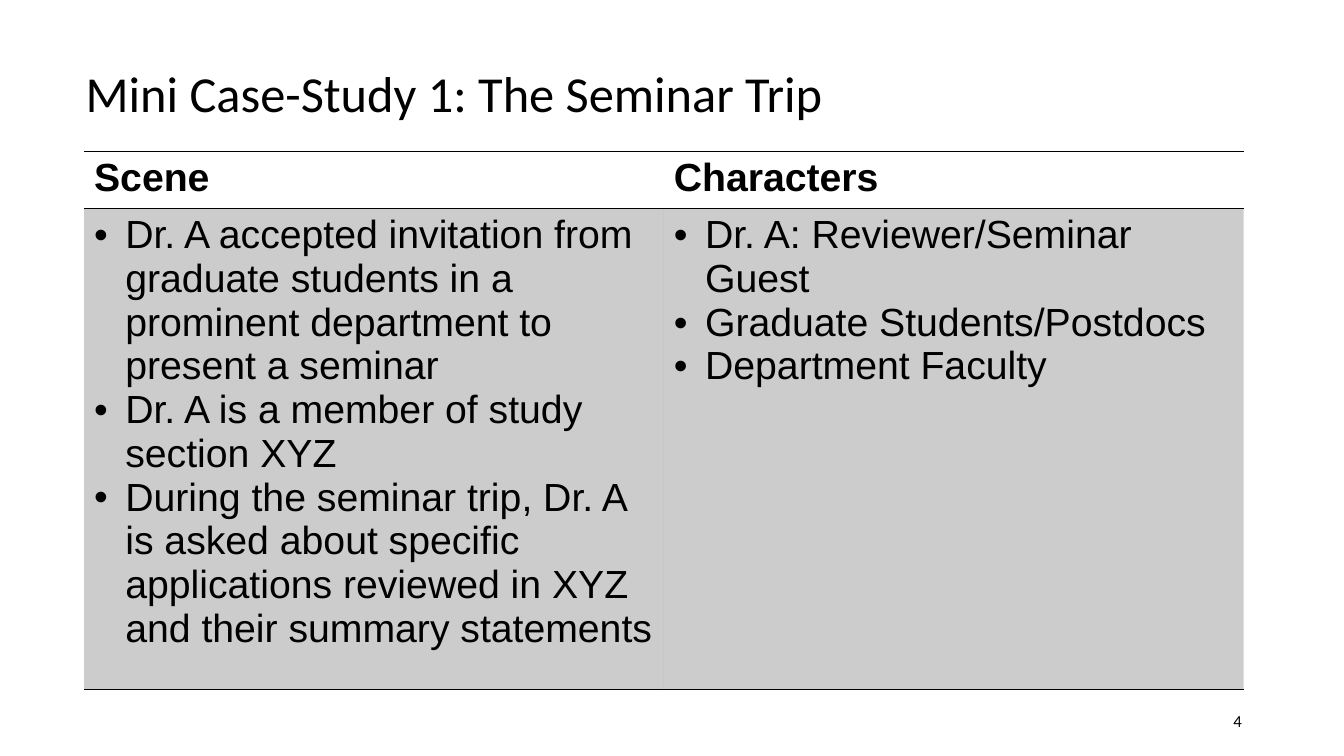
from lxml.etree import SubElement
from pptx import Presentation
from pptx.dml.color import RGBColor
from pptx.enum.text import MSO_ANCHOR as Anchor, PP_ALIGN as Align
from pptx.oxml import parse_xml
from pptx.oxml.ns import nsdecls, qn
from pptx.util import Inches, Pt

UNIT = 7.5 / 9
BLACK = "000000"
SCENE = [
    "Dr. A accepted invitation from graduate students in a prominent department to present a seminar",
    "Dr. A is a member of study section XYZ",
    "During the seminar trip, Dr. A is asked about specific applications reviewed in XYZ and their summary statements",
]
CHARACTERS = [
    "Dr. A: Reviewer/Seminar Guest",
    "Graduate Students/Postdocs",
    "Department Faculty",
]


def grid(units):
    return Inches(units * UNIT)


def color(value):
    return RGBColor.from_string(value)


def add_span(para, text, size, font, bold=False):
    span = para.add_run()
    span.text = text
    span.font.size = Pt(size)
    span.font.name = font
    span.font.bold = bold
    span.font.color.rgb = color(BLACK)


def add_label(page, area, text, size, align=Align.LEFT, spacing=1.0):
    box = page.shapes.add_textbox(*map(grid, area))
    frame = box.text_frame
    frame.word_wrap = True
    frame.vertical_anchor = Anchor.MIDDLE
    para = frame.paragraphs[0]
    para.alignment = align
    para.line_spacing = spacing
    add_span(para, text, size, "Calibri")


def add_bullet(para):
    props = para._p.get_or_add_pPr()
    indent = Inches(0.31)
    props.set("marL", str(indent))
    props.set("indent", str(-indent))
    SubElement(props, qn("a:buFont")).set("typeface", "Arial")
    SubElement(props, qn("a:buChar")).set("char", "•")


def set_borders(cell, ruled):
    props = cell._tc.get_or_add_tcPr()
    for index, side in enumerate("LRTB"):
        paint = "<a:noFill/>"
        if side in ruled:
            paint = f'<a:solidFill><a:srgbClr val="{BLACK}"/></a:solidFill>'
        props.insert(index, parse_xml(
            f'<a:ln{side} {nsdecls("a")} w="{Pt(1)}">{paint}</a:ln{side}>'))


def set_tint(cell, opacity):
    cell.fill.solid()
    cell.fill.fore_color.rgb = color(BLACK)
    tint = cell._tc.get_or_add_tcPr().find(".//" + qn("a:srgbClr"))
    SubElement(tint, qn("a:alpha")).set("val", str(opacity * 1000))


def fill_header(cell, text):
    add_span(cell.text_frame.paragraphs[0], text, 28, "Arial", True)
    cell.fill.background()
    set_borders(cell, "TB")


def fill_body(cell, items):
    frame = cell.text_frame
    for index, item in enumerate(items):
        para = frame.add_paragraph() if index else frame.paragraphs[0]
        add_bullet(para)
        add_span(para, item, 28, "Arial")
    set_tint(cell, 20)
    set_borders(cell, "TB")


def add_case_table(page, area, heights, columns):
    table = page.shapes.add_table(2, len(columns), *map(grid, area)).table
    table.first_row = False
    table.horz_banding = False
    for row, height in zip(table.rows, heights):
        row.height = grid(height)
    for index, (heading, items) in enumerate(columns.items()):
        fill_header(table.cell(0, index), heading)
        fill_body(table.cell(1, index), items)


def main():
    deck = Presentation()
    deck.slide_width = Inches(13.33)
    deck.slide_height = grid(9)
    page = deck.slides.add_slide(deck.slide_layouts[6])
    add_label(page, (0.9, 0.6, 14, 1.1),
              "Mini Case-Study 1: The Seminar Trip", 36, spacing=0.9)
    add_label(page, (11.3, 8.34, 3.6, 0.48), "4", 12, Align.RIGHT)
    add_case_table(page, (1, 1.8, 13.8, 5.97), (0.65, 5.32),
                   {"Scene": SCENE, "Characters": CHARACTERS})
    deck.save("out.pptx")


if __name__ == "__main__":
    main()
